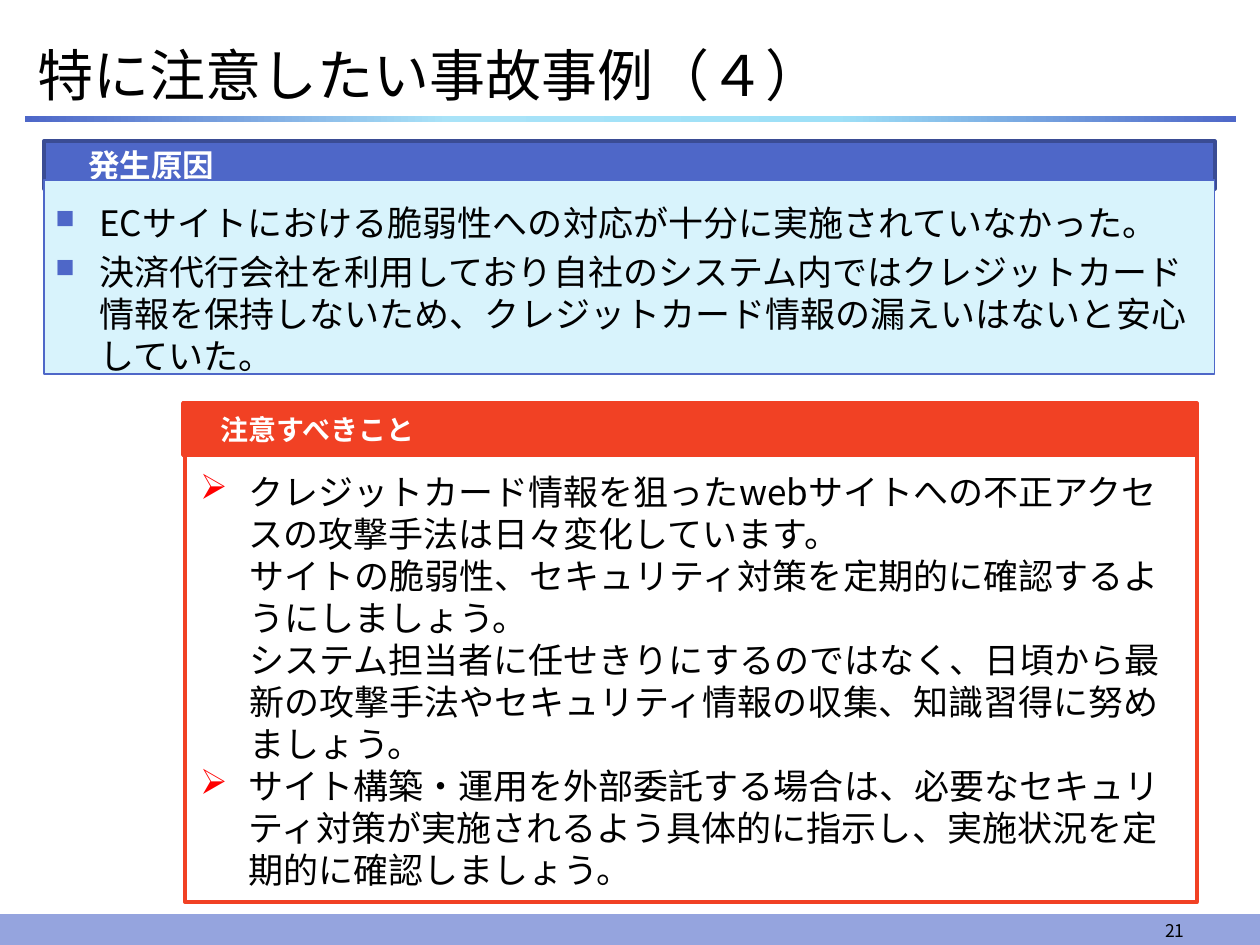
from lxml.etree import SubElement
from pptx import Presentation
from pptx.dml.color import RGBColor
from pptx.enum.shapes import MSO_SHAPE
from pptx.enum.text import MSO_ANCHOR, PP_ALIGN
from pptx.oxml.ns import qn
from pptx.util import Pt

FONT = "Noto Sans CJK JP"
BLUE, RED, BLACK, WHITE = "4E67C8", "F14124", "000000", "FFFFFF"


def color(value):
    return RGBColor.from_string(value)


def add_box(slide, box, fill, line=None, line_width=0.75):
    shape = slide.shapes.add_shape(MSO_SHAPE.RECTANGLE, *map(Pt, box))
    shape.shadow.inherit = False
    shape.fill.solid()
    shape.fill.fore_color.rgb = color(fill)
    if line:
        shape.line.color.rgb = color(line)
        shape.line.width = Pt(line_width)
    else:
        shape.line.fill.background()
    return shape


def set_text(shape, lines, size, font_color=BLACK, bold=False, anchor=MSO_ANCHOR.TOP,
             align=PP_ALIGN.LEFT, margins=(7.2, 3.6, 7.2, 3.6)):
    frame = shape.text_frame
    frame.word_wrap = True
    frame.vertical_anchor = anchor
    (frame.margin_left, frame.margin_top,
     frame.margin_right, frame.margin_bottom) = map(Pt, margins)
    frame.text = "\n".join(lines)
    for paragraph in frame.paragraphs:
        paragraph.alignment = align
        for run in paragraph.runs:
            run.font.name = FONT
            run.font.size = Pt(size)
            run.font.bold = bold
            run.font.color.rgb = color(font_color)
            SubElement(run.font._element, qn("a:ea"), typeface=FONT)
    return frame.paragraphs


def add_text(slide, box, lines, size, **options):
    shape = slide.shapes.add_textbox(*map(Pt, box))
    return set_text(shape, lines, size, **options)


def format_body(paragraph, left, bullet=None, bullet_color=BLUE, bullet_percent=100):
    """Set tight line spacing and, if a bullet is given, a hanging indent."""
    paragraph.line_spacing = Pt(24)
    properties = paragraph._p.get_or_add_pPr()
    properties.set("marL", str(Pt(left)))
    properties.set("indent", str(Pt(-left if bullet else 0)))
    if bullet:
        bullet_fill = SubElement(properties, qn("a:buClr"))
        SubElement(bullet_fill, qn("a:srgbClr"), val=bullet_color)
        SubElement(properties, qn("a:buSzPct"), val=str(bullet_percent * 1000))
        SubElement(properties, qn("a:buChar"), char=bullet)


def add_title(slide, box, title):
    left, top, width, height = box
    add_text(slide, box, [title], 32, anchor=MSO_ANCHOR.MIDDLE)
    rule = add_box(slide, (left, top + height + 0.7, width, 3.6), BLUE)
    rule.fill.gradient()
    rule.fill.gradient_angle = 0
    stops = rule._element.spPr.find(qn("a:gradFill")).find(qn("a:gsLst"))
    for stop in list(stops):
        stops.remove(stop)
    for percent, value in ((0, BLUE), (35, "A9E3F8"), (67, "9EE0F7"), (100, BLUE)):
        stop = SubElement(stops, qn("a:gs"), pos=str(percent * 1000))
        SubElement(stop, qn("a:srgbClr"), val=value)


def add_footer(slide, box, number):
    left, top, width, height = box
    add_box(slide, box, "95A4DE", "95A4DE")
    add_text(slide, (left + 516, top - 3.6, 168, 22.3), [number], 10,
             anchor=MSO_ANCHOR.BOTTOM, align=PP_ALIGN.RIGHT)


def add_causes(slide, box, heading, causes):
    left, top, width, height = box
    header = add_box(slide, (left, top, width, 27.4), BLUE, "3A4C94", 2)
    set_text(header, [heading], 18, WHITE, True, MSO_ANCHOR.MIDDLE,
             margins=(25.2, 3.6, 7.2, 3.6))
    add_box(slide, (left, top + 22.3, width, height - 22.3), "D8F3FC", BLUE)
    for paragraph in add_text(slide, (left - 0.7, top + 31, width, 106), causes, 20):
        format_body(paragraph, 25.2, "■", BLUE, 75)
        paragraph.space_after = Pt(4)


def add_cautions(slide, box, heading, cautions):
    """Draw the red panel; cautions are pairs of (has bullet, text)."""
    left, top, width, height = box
    panel = add_box(slide, (left + 1.4, top + 11.5, width - 1.4, height - 11.5),
                    WHITE, RED, 2)
    paragraphs = set_text(panel, [text for _, text in cautions], 20,
                          margins=(8.6, 27, 8.6, 0))
    for paragraph, (has_bullet, _) in zip(paragraphs, cautions):
        if has_bullet:
            format_body(paragraph, 27.4, "➢", "FF0000")
        else:
            format_body(paragraph, 28)
    header = add_box(slide, (left, top, width, 29.5), RED, RED, 2)
    set_text(header, [heading], 16, WHITE, True, MSO_ANCHOR.MIDDLE,
             margins=(21.8, 0.7, 5.8, 0.7))


def main():
    presentation = Presentation()
    presentation.slide_width, presentation.slide_height = Pt(720), Pt(540)
    slide = presentation.slides.add_slide(presentation.slide_layouts[6])
    add_footer(slide, (0, 522.7, 720, 17.3), "21")
    add_title(slide, (14.4, 18.7, 692, 46.8), "特に注意したい事故事例（４）")
    add_causes(slide, (25.2, 80.6, 669, 133.2), "発生原因", [
        "ECサイトにおける脆弱性への対応が十分に実施されていなかった。",
        "決済代行会社を利用しており自社のシステム内ではクレジットカード情報を保持しないため、"
        "クレジットカード情報の漏えいはないと安心していた。",
    ])
    add_cautions(slide, (104.4, 230.4, 579.6, 285.1), "注意すべきこと", [
        (True, "クレジットカード情報を狙ったwebサイトへの不正アクセスの攻撃手法は日々変化しています。"),
        (False, "サイトの脆弱性、セキュリティ対策を定期的に確認するようにしましょう。"),
        (False, "システム担当者に任せきりにするのではなく、日頃から最新の攻撃手法や"
                "セキュリティ情報の収集、知識習得に努めましょう。"),
        (True, "サイト構築・運用を外部委託する場合は、必要なセキュリティ対策が実施されるよう"
               "具体的に指示し、実施状況を定期的に確認しましょう。"),
    ])
    presentation.save("out.pptx")


if __name__ == "__main__":
    main()
